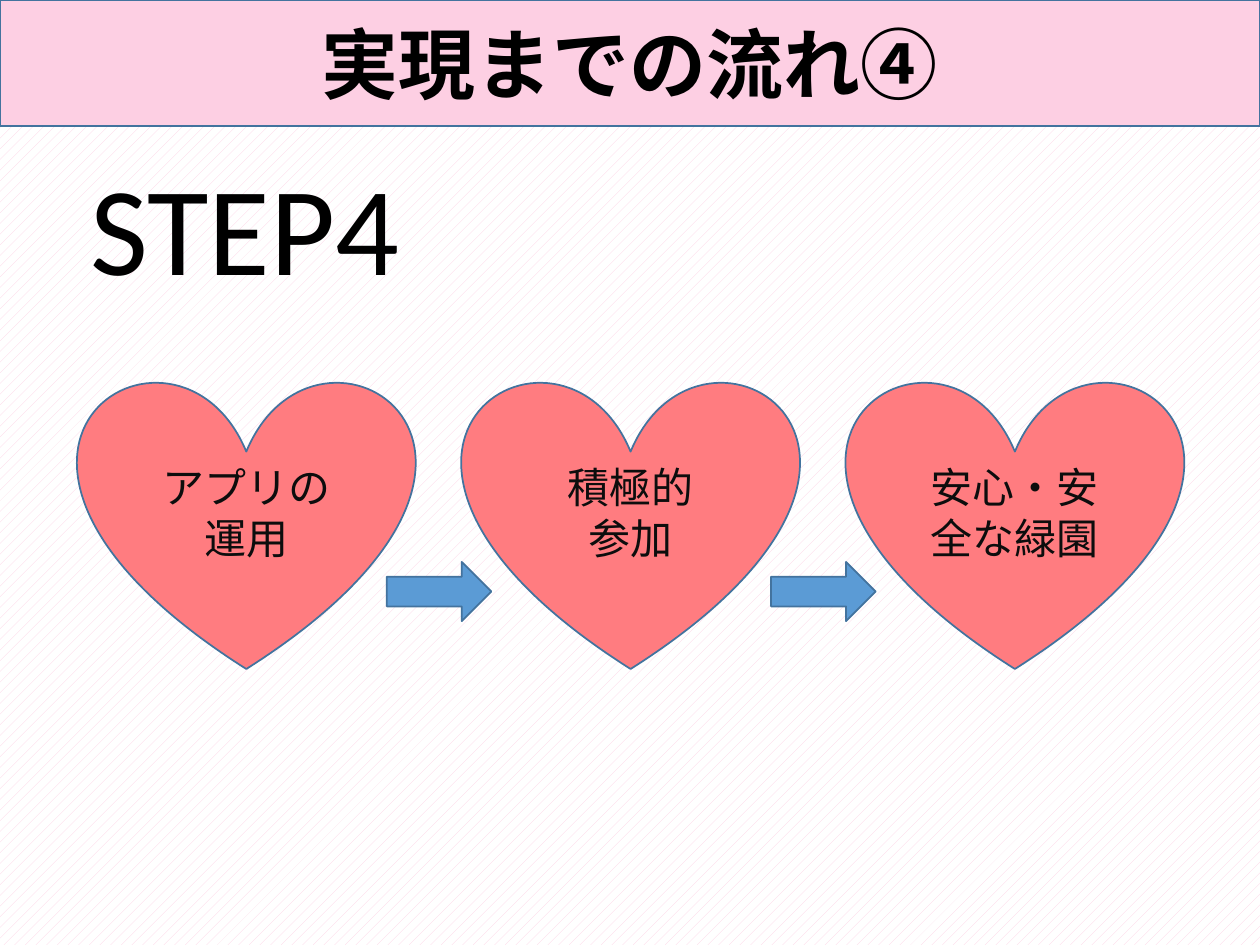
import pptx
import pptx.dml.color
import pptx.enum.dml
import pptx.enum.shapes
import pptx.enum.text
import pptx.oxml
import pptx.util
from pptx.util import Inches

SHAPE = pptx.enum.shapes.MSO_SHAPE
ALIGN = pptx.enum.text.PP_ALIGN
ANCHOR = pptx.enum.text.MSO_ANCHOR
AUTO = pptx.enum.text.MSO_AUTO_SIZE


def rgb(value):
    return pptx.dml.color.RGBColor.from_string(value)


def write(tf, text, size, font="Calibri", color="000000", bold=False,
          align=None, anchor=ANCHOR.TOP, wrap=True, auto_size=AUTO.NONE):
    """Fill a text frame, one paragraph per line; return the runs."""
    tf.auto_size = auto_size
    tf.word_wrap = wrap
    tf.vertical_anchor = anchor
    runs = []
    for i, line in enumerate(text.split("\n")):
        p = tf.paragraphs[0] if i == 0 else tf.add_paragraph()
        p.alignment = align
        r = p.add_run()
        r.text = line
        r.font.name = font
        r.font.size = pptx.util.Pt(size)
        r.font.bold = bold
        r.font.color.rgb = rgb(color)
        runs.append(r)
    return runs


class Deck:
    PINK, HEART, ARROW, EDGE = "FDCFE3", "FF7C80", "5B9BD5", "43739E"

    def __init__(self, prs):
        self.s = prs.slides.add_slide(prs.slide_layouts[5])

    def background(self):
        fill = self.s.background.fill
        fill.patterned()
        fill.pattern = pptx.enum.dml.MSO_PATTERN.PERCENT_20
        fill.fore_color.rgb = rgb(self.PINK)
        fill.back_color.rgb = rgb("FFFFFF")

    def paint(self, sp, color):
        sp.fill.solid()
        sp.fill.fore_color.rgb = rgb(color)
        sp.line.color.rgb = rgb(self.EDGE)
        sp.line.width = pptx.util.Pt(1)

    def title(self, text, width, height):
        sp = self.s.shapes.title
        sp.left, sp.top = Inches(0), Inches(0)
        sp.width, sp.height = Inches(width), Inches(height)
        self.paint(sp, self.PINK)
        r = write(sp.text_frame, text, 44, font="Cambria", bold=True,
                  align=ALIGN.CENTER, anchor=ANCHOR.MIDDLE)[0]
        # Thin white outline around the letters
        r.font._element.insert(0, pptx.oxml.parse_xml(
            '<a:ln xmlns:a="http://schemas.openxmlformats.org/drawingml/2006/main"'
            ' w="9525"><a:solidFill><a:srgbClr val="FFFFFF"/></a:solidFill></a:ln>'))

    def label(self, text, x, y, w, h):
        sp = self.s.shapes.add_textbox(Inches(x), Inches(y), Inches(w), Inches(h))
        write(sp.text_frame, text, 72, wrap=False, auto_size=AUTO.SHAPE_TO_FIT_TEXT)

    def shape(self, kind, x, y, w, h, color):
        sp = self.s.shapes.add_shape(kind, Inches(x), Inches(y), Inches(w), Inches(h))
        sp.shadow.inherit = False
        self.paint(sp, color)
        return sp

    def heart(self, text, x, y):
        sp = self.shape(SHAPE.HEART, x, y, 2.67, 2.3, self.HEART)
        write(sp.text_frame, text, 24, color="0D0D0D",
              align=ALIGN.CENTER, anchor=ANCHOR.MIDDLE)

    def arrow(self, x, y):
        sp = self.shape(SHAPE.DOWN_ARROW, x, y, 0.47, 0.83, self.ARROW)
        sp.rotation = 270


def main():
    prs = pptx.Presentation()
    prs.slide_width, prs.slide_height = Inches(10), Inches(7.5)
    deck = Deck(prs)

    # Backdrop and headings
    deck.background()
    deck.title("実現までの流れ④", 10, 1)
    deck.label("STEP4", 0.62, 1.14, 2.68, 1.31)

    # Hearts at an even pitch, then an arrow in each gap
    left, pitch = 0.62, 3.05
    steps = ["アプリの\n運用", "積極的\n参加", "安心・安全な緑園"]
    for i, text in enumerate(steps):
        deck.heart(text, left + i * pitch, 3.01)
    for i in range(len(steps) - 1):
        deck.arrow(3.25 + i * pitch, 4.28)

    prs.save("out.pptx")


if __name__ == "__main__":
    main()
